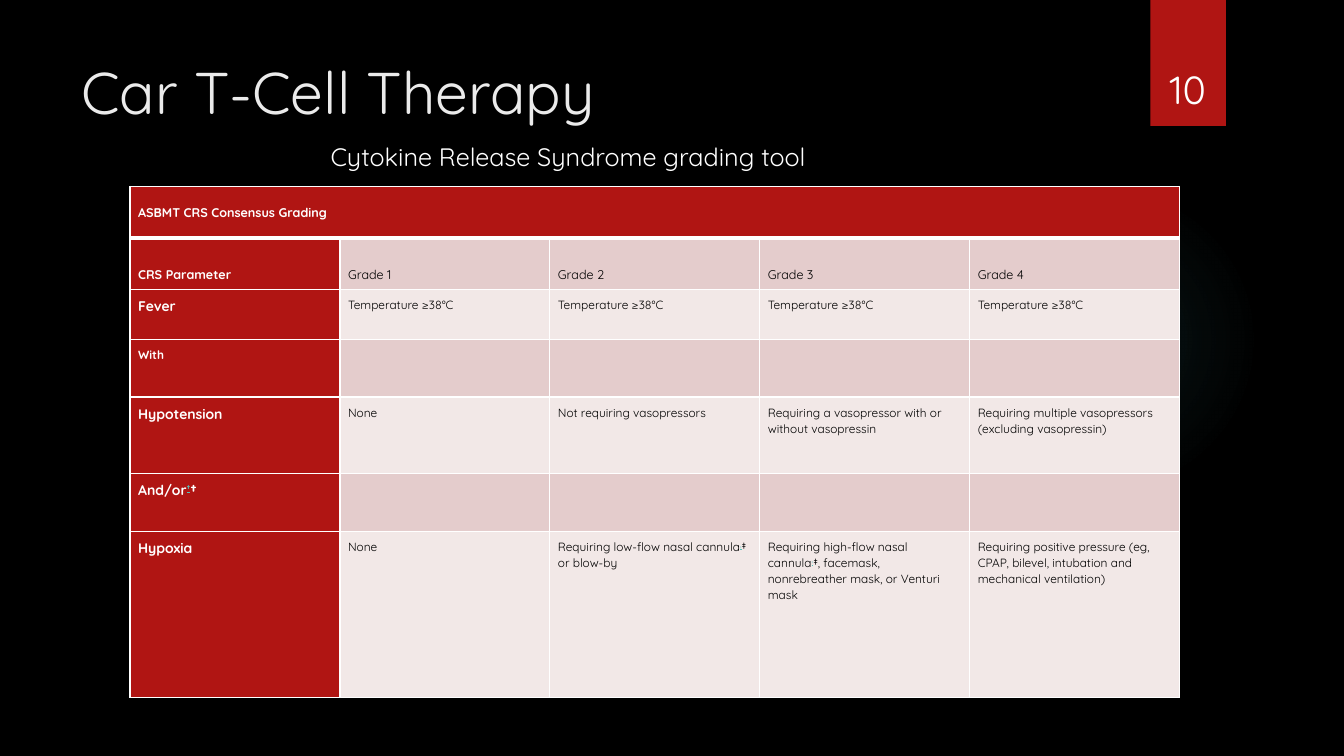
from lxml import etree
from pptx import Presentation
from pptx.dml.color import RGBColor
from pptx.enum.shapes import MSO_SHAPE
from pptx.enum.text import MSO_ANCHOR, MSO_AUTO_SIZE, PP_ALIGN
from pptx.oxml import parse_xml
from pptx.oxml.ns import nsdecls, qn
from pptx.util import Inches, Pt

TITLE = "Car T-Cell Therapy"
SUBTITLE = "Cytokine Release Syndrome grading tool"
PAGE_NUMBER = "10"
TABLE_HEADING = "ASBMT CRS Consensus Grading"
FEVER = "Temperature ≥38°C"

# A cell is a string, or a list of (text, format) runs.
AND_OR = [("And/or", {}), ("†", {"role": "label_mark"}), ("†", {})]
LOW_FLOW = [("Requiring low-flow nasal cannula", {}),
            ("‡", {"role": "note_mark"}), ("‡ or blow-by", {})]
HIGH_FLOW = [("Requiring high-flow nasal cannula", {}),
             ("‡", {"role": "note_mark"}),
             ("‡, facemask, nonrebreather mask, or Venturi mask", {})]

# Row height, type role of the label, type role of the grades, cells
GRADING = [
    (0.51, "heading", "heading", [TABLE_HEADING, "", "", "", ""]),
    (0.51, "heading", "grade",
     ["CRS Parameter", "Grade 1", "Grade 2", "Grade 3", "Grade 4"]),
    (0.5, "label", "body", ["Fever", FEVER, FEVER, FEVER, FEVER]),
    (0.57, "joiner", "body", ["With", "", "", "", ""]),
    (0.76, "label", "body",
     ["Hypotension", "None", "Not requiring vasopressors",
      "Requiring a vasopressor with or without vasopressin",
      "Requiring multiple vasopressors (excluding vasopressin)"]),
    (0.57, "label", "body", [AND_OR, "", "", "", ""]),
    (1.65, "label", "body",
     ["Hypoxia", "None", LOW_FLOW, HIGH_FLOW,
      "Requiring positive pressure (eg, CPAP, bilevel, intubation and "
      "mechanical ventilation)"]),
]
COLUMN_WIDTH = 10.41 / 5


class Theme:
    font = "Quicksand"
    background = "000000"
    accent = "B01513"
    band_dark = "E4CCCC"
    band_light = "F2E8E7"
    rule = "FFFFFF"
    glow = "50B9C1"
    # size, colour, bold
    roles = {
        "title": (42, "EBEBEB", False),
        "subtitle": (18, "FFFFFF", False),
        "number": (28, "FFFFFF", False),
        "heading": (9, "FFFFFF", True),
        "grade": (9, "000000", False),
        "label": (10, "FFFFFF", True),
        "joiner": (8.5, "FFFFFF", True),
        "body": (8.5, "000000", False),
        "label_mark": (10, "58C1BA", True),
        "note_mark": (5, "58C1BA", False),
    }


def write(frame, content, role, align=None, line_spacing=None, space_after=None):
    """Fill a text frame with a string or a list of runs."""
    paragraph = frame.paragraphs[0]
    paragraph.alignment = align
    paragraph.line_spacing = line_spacing
    if space_after is not None:
        paragraph.space_after = Pt(space_after)
    for text, style in [(content, {})] if isinstance(content, str) else content:
        run_role = style.get("role", role)
        size, color, bold = Theme.roles[run_role]
        run = paragraph.add_run()
        run.text = text
        font = run.font
        font.name, font.size, font.bold = Theme.font, Pt(size), bold
        font.color.rgb = RGBColor.from_string(color)
        if run_role.endswith("_mark"):
            font.underline = True
            run._r.get_or_add_rPr().set("baseline", "30000")


def add_text(slide, box, content, role, anchor=MSO_ANCHOR.TOP,
             auto_size=MSO_AUTO_SIZE.NONE, **style):
    frame = slide.shapes.add_textbox(*map(Inches, box)).text_frame
    frame.word_wrap = True
    frame.auto_size = auto_size
    frame.vertical_anchor = anchor
    write(frame, content, role, **style)


def add_plain_shape(slide, preset, box, color):
    shape = slide.shapes.add_shape(preset, *map(Inches, box))
    shape.shadow.inherit = False
    shape.line.fill.background()
    shape.fill.solid()
    shape.fill.fore_color.rgb = RGBColor.from_string(color)
    return shape


def add_glow(slide):
    glow = add_plain_shape(slide, MSO_SHAPE.OVAL, (9.41, 1.83, 3.08, 3.08), Theme.glow)
    stops = "".join(
        f'<a:gs pos="{position * 1000}"><a:srgbClr val="{Theme.glow}">'
        f'<a:alpha val="{alpha * 1000}"/></a:srgbClr></a:gs>'
        for position, alpha in ((0, 7), (36, 6), (69, 0)))
    gradient = parse_xml(
        f'<a:gradFill {nsdecls("a")}><a:gsLst>{stops}</a:gsLst><a:path path="circle">'
        '<a:fillToRect l="50000" t="50000" r="50000" b="50000"/></a:path></a:gradFill>')
    properties = glow._element.spPr
    properties.replace(properties.find(qn("a:solidFill")), gradient)


def set_borders(cell, top, bottom):
    properties = cell._tc.get_or_add_tcPr()
    for side, width in (("L", 1), ("R", 1), ("T", top), ("B", bottom)):
        line = etree.SubElement(properties, qn(f"a:ln{side}"), w=str(Pt(width)))
        fill = etree.SubElement(line, qn("a:solidFill"))
        etree.SubElement(fill, qn("a:srgbClr"), val=Theme.rule)


def add_grading_table(slide):
    heights = [row[0] for row in GRADING]
    columns = len(GRADING[0][3])
    table = slide.shapes.add_table(
        len(GRADING), columns, Inches(1.29), Inches(1.85),
        Inches(COLUMN_WIDTH * columns), Inches(sum(heights))).table
    for column in table.columns:
        column.width = Inches(COLUMN_WIDTH)
    anchors = {0: MSO_ANCHOR.MIDDLE, 1: MSO_ANCHOR.BOTTOM}
    for r, (height, label_role, grade_role, contents) in enumerate(GRADING):
        table.rows[r].height = Inches(height)
        band = Theme.band_dark if r % 2 else Theme.band_light
        for c, content in enumerate(contents):
            cell = table.cell(r, c)
            set_borders(cell, top=3 if r == 1 else 1, bottom=3 if r == 0 else 1)
            cell.fill.solid()
            cell.fill.fore_color.rgb = RGBColor.from_string(
                Theme.accent if r == 0 or c == 0 else band)
            cell.margin_left = cell.margin_right = Inches(0.08)
            cell.margin_top = cell.margin_bottom = Inches(0.07)
            cell.vertical_anchor = anchors.get(r, MSO_ANCHOR.TOP)
            if content:
                write(cell.text_frame, content, grade_role if c else label_role,
                      line_spacing=1.07, space_after=7.5 if r == 0 else 0)
    table.cell(0, 0).merge(table.cell(0, columns - 1))


def main():
    deck = Presentation()
    deck.slide_width, deck.slide_height = Inches(13.33), Inches(7.5)
    slide = deck.slides.add_slide(deck.slide_layouts[6])
    slide.background.fill.solid()
    slide.background.fill.fore_color.rgb = RGBColor.from_string(Theme.background)

    add_glow(slide)
    add_plain_shape(slide, MSO_SHAPE.RECTANGLE, (11.41, 0, 0.75, 1.25), Theme.accent)
    add_text(slide, (0.71, 0.5, 10.29, 1.53), TITLE, "title")
    add_grading_table(slide)
    add_text(slide, (3.18, 1.35, 6.13, 0.4), SUBTITLE, "subtitle",
             auto_size=MSO_AUTO_SIZE.SHAPE_TO_FIT_TEXT)
    add_text(slide, (11.32, 0.32, 0.92, 0.84), PAGE_NUMBER, "number",
             anchor=MSO_ANCHOR.BOTTOM, align=PP_ALIGN.CENTER)
    deck.save("out.pptx")


if __name__ == "__main__":
    main()
